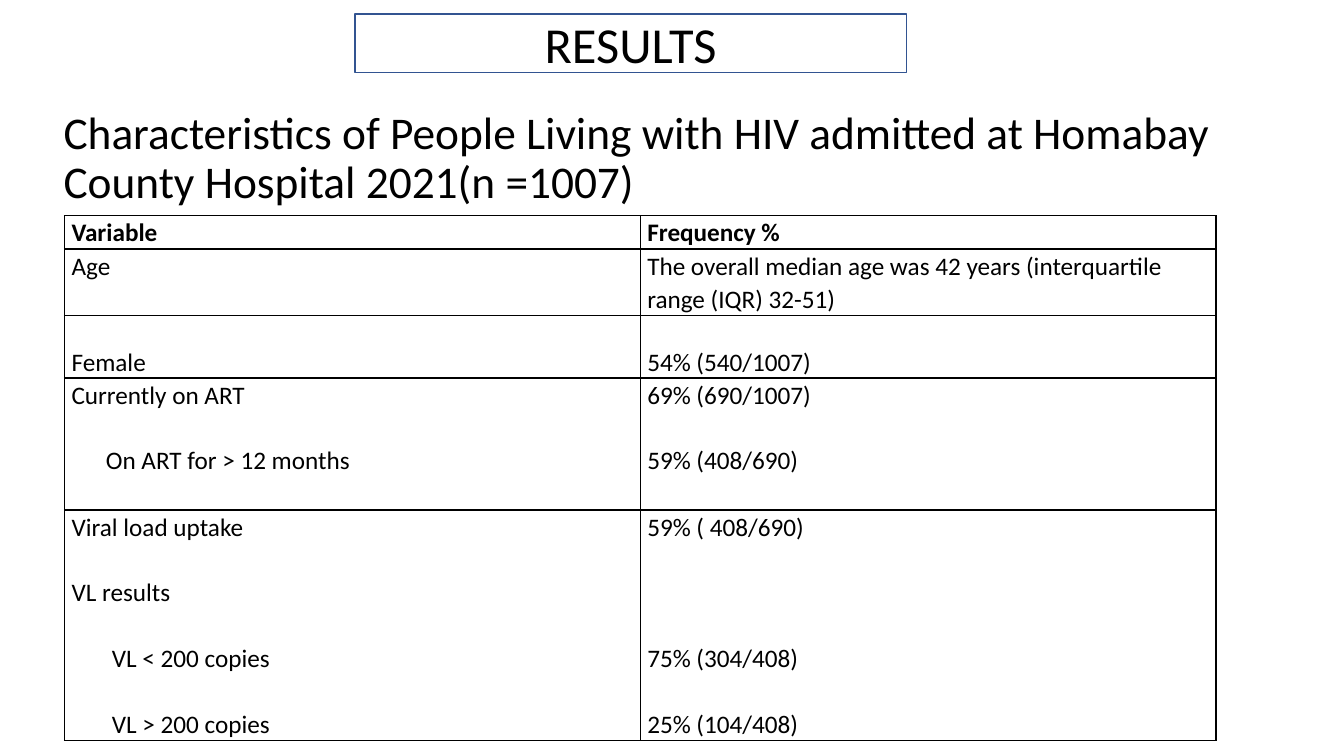
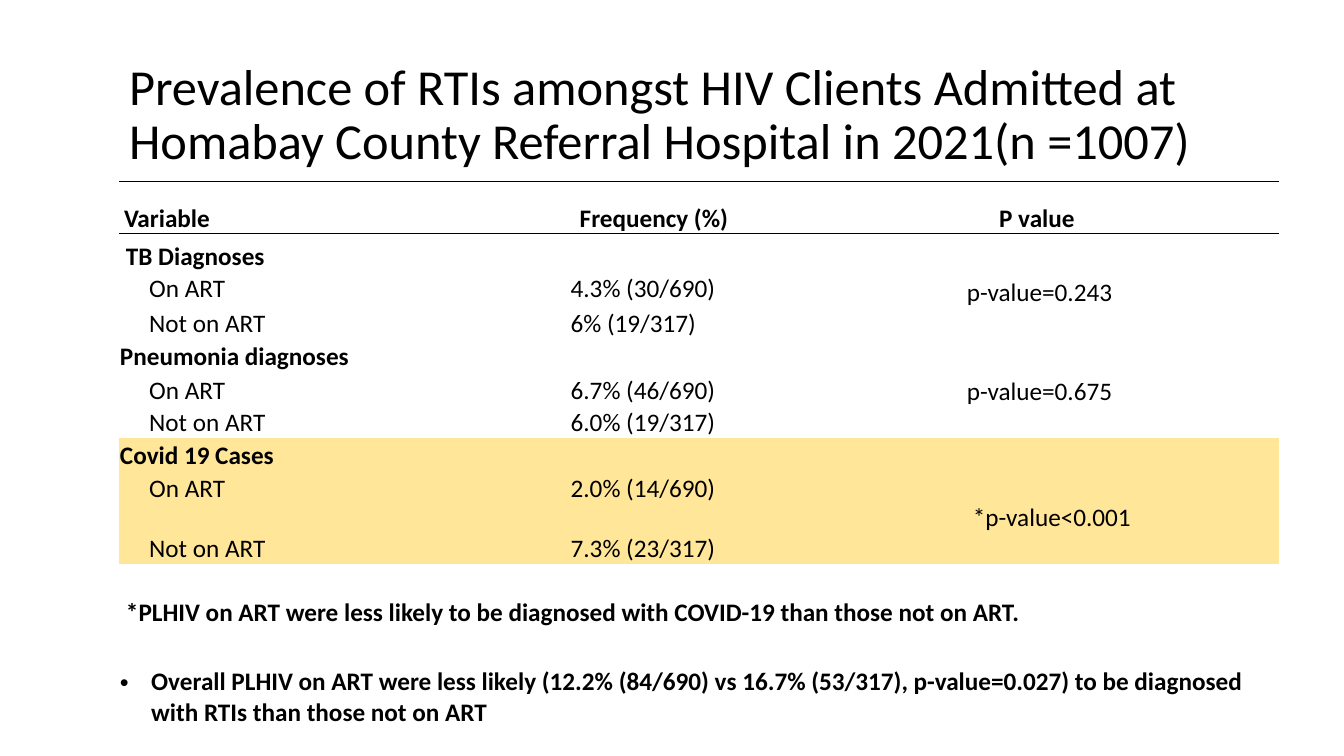
from dataclasses import dataclass
from lxml.etree import SubElement
from pptx import Presentation
from pptx.dml.color import RGBColor
from pptx.enum.shapes import MSO_SHAPE
from pptx.enum.text import MSO_ANCHOR, MSO_AUTO_SIZE, PP_ALIGN
from pptx.oxml.ns import qn
from pptx.util import Inches, Pt

BLACK = RGBColor(0x00, 0x00, 0x00)
BLUE = RGBColor(0x32, 0x54, 0x91)
YELLOW = RGBColor(0xFF, 0xE6, 0x99)
FONT = "Calibri"
TITLE_ONLY = 5
BLANK_LINE = 23.5
ALL_SIDES = ("L", "R", "T", "B")


@dataclass
class Line:
    text: str
    indent: float = 0
    blank_lines_before: int = 0
    bold: bool = False
    bullet: bool = False


@dataclass
class CellStyle:
    margins: dict
    anchor: MSO_ANCHOR
    spacing: float = 1.0
    borders: tuple = ()
    fill: RGBColor = None


def apply_format(target, values):
    for name, value in values.items():
        setattr(target, name, value)


def margins(side, top=0, bottom=0):
    return {
        "margin_left": Inches(side),
        "margin_right": Inches(side),
        "margin_top": Inches(top),
        "margin_bottom": Inches(bottom),
    }


def add_span(para, text, size, bold=False):
    span = para.add_run()
    span.text = text
    apply_format(span.font, {"name": FONT, "size": Pt(size), "bold": bold})
    span.font.color.rgb = BLACK


def place_title(page, box, text, size):
    title = page.shapes.title
    apply_format(title, dict(zip(("left", "top", "width", "height"), map(Inches, box))))
    frame = title.text_frame
    apply_format(frame, {
        **margins(0.1),
        "word_wrap": True,
        "auto_size": MSO_AUTO_SIZE.NONE,
        "vertical_anchor": MSO_ANCHOR.MIDDLE,
    })
    para = frame.paragraphs[0]
    apply_format(para, {"alignment": PP_ALIGN.LEFT, "line_spacing": 0.9})
    add_span(para, text, size)


def place_heading(page, box, text):
    heading = page.shapes.add_shape(MSO_SHAPE.RECTANGLE, *map(Inches, box))
    heading.shadow.inherit = False
    heading.fill.background()
    heading.line.color.rgb = BLUE
    heading.line.width = Pt(1)
    frame = heading.text_frame
    apply_format(frame, {"vertical_anchor": MSO_ANCHOR.MIDDLE, "word_wrap": True})
    para = frame.paragraphs[0]
    para.alignment = PP_ALIGN.CENTER
    add_span(para, text, 36)


def place_table(page, left, top, widths, heights):
    frame = page.shapes.add_table(
        len(heights), len(widths), Inches(left), Inches(top),
        Inches(sum(widths)), Inches(sum(heights)))
    table = frame.table
    apply_format(table, {"first_row": False, "horz_banding": False})
    for column, width in zip(table.columns, widths):
        column.width = Inches(width)
    for row, height in zip(table.rows, heights):
        row.height = Inches(height)
    return table


def style_cell(cell, style):
    apply_format(cell, {**style.margins, "vertical_anchor": style.anchor})
    properties = cell._tc.get_or_add_tcPr()
    for side in ALL_SIDES:
        border = SubElement(properties, qn(f"a:ln{side}"), w=str(Pt(1)))
        if side in style.borders:
            solid = SubElement(border, qn("a:solidFill"))
            SubElement(solid, qn("a:srgbClr"), val=str(BLACK))
        else:
            SubElement(border, qn("a:noFill"))
    if style.fill is None:
        cell.fill.background()
    else:
        cell.fill.solid()
        cell.fill.fore_color.rgb = style.fill


def write_cell(cell, lines, spacing):
    frame = cell.text_frame
    for index, line in enumerate(lines):
        para = frame.add_paragraph() if index else frame.paragraphs[0]
        apply_format(para, {
            "line_spacing": spacing,
            "space_before": Pt(BLANK_LINE * line.blank_lines_before),
        })
        properties = para._p.get_or_add_pPr()
        properties.set("marL", str(Inches(line.indent)))
        if line.bullet:
            properties.set("indent", str(-Inches(line.indent)))
            SubElement(properties, qn("a:buFont"), typeface="Arial")
            SubElement(properties, qn("a:buChar"), char="•")
        add_span(para, line.text, 18, line.bold)


def fill_table(table, rows, style_for):
    for row_index, row in enumerate(rows):
        for column_index, lines in enumerate(row):
            cell = table.cell(row_index, column_index)
            style = style_for(row_index, column_index)
            style_cell(cell, style)
            write_cell(cell, lines, style.spacing)


def characteristics_table(page, left, top):
    rows = [
        ([Line("Variable", bold=True)], [Line("Frequency %", bold=True)]),
        ([Line("Age")],
         [Line("The overall median age was 42 years (interquartile range (IQR) 32-51)")]),
        ([Line("Female")], [Line("54% (540/1007)")]),
        ([Line("Currently on ART"), Line("On ART for > 12 months", 0.34, 1)],
         [Line("69% (690/1007)"), Line("59% (408/690)", 0, 1)]),
        ([Line("Viral load uptake"), Line("VL results", 0, 1),
          Line("VL < 200 copies", 0.4, 1), Line("VL > 200 copies", 0.4, 1)],
         [Line("59% ( 408/690)"), Line("75% (304/408)", 0, 3),
          Line("25% (104/408)", 0, 1)]),
    ]
    female_row = 2

    def style_for(row, column):
        anchor = MSO_ANCHOR.BOTTOM if row == female_row else MSO_ANCHOR.TOP
        return CellStyle(margins(0.07), anchor, 1.07, ALL_SIDES)

    table = place_table(page, left, top, [5.71, 5.71], [0.33, 0.66, 0.62, 1.31, 2.28])
    fill_table(table, rows, style_for)


def diagnosis_rows(name, name_indent, on_art, not_on_art, p_value, p_indent=0):
    return [
        ([Line(name, name_indent, bold=True)], [], []),
        ([Line("On ART", 0.29)], [Line(on_art)], [Line(p_value, p_indent)]),
        ([Line("Not on ART", 0.29)], [Line(not_on_art)], []),
    ]


def prevalence_table(page, left, top):
    rows = [
        ([Line("Variable", bold=True)], [Line("Frequency (%)", 0.05, bold=True)],
         [Line("P value", 0.28, bold=True)]),
        *diagnosis_rows("TB Diagnoses", 0.06, "4.3% (30/690)", "6% (19/317)",
                        "p-value=0.243"),
        *diagnosis_rows("Pneumonia diagnoses", 0, "6.7% (46/690)", "6.0% (19/317)",
                        "p-value=0.675"),
        *diagnosis_rows("Covid 19 Cases", 0, "2.0% (14/690)", "7.3% (23/317)",
                        "*p-value<0.001", 0.06),
        ([], [], []),
        ([Line("*PLHIV on ART were less likely to be diagnosed with COVID-19 than "
               "those not on ART.", 0.06, bold=True)], [], []),
        ([Line("Overall PLHIV on ART were less likely (12.2% (84/690) vs 16.7% (53/317), "
               "p-value=0.027) to be diagnosed with RTIs than those not on ART",
               0.31, bold=True, bullet=True)], [], []),
    ]
    p_value_rows = (2, 5, 8)
    covid_rows = (7, 8, 9)
    note_rows = (10, 11, 12)
    covid_note_row = 11

    def style_for(row, column):
        if row == 0:
            return CellStyle(margins(0.05), MSO_ANCHOR.BOTTOM, 1.07, ("T", "B"))
        is_p_value = column == 2 and row in p_value_rows
        return CellStyle(
            margins(0.01, 0.01, 0.31 if is_p_value else 0),
            MSO_ANCHOR.TOP if row == covid_note_row else MSO_ANCHOR.BOTTOM,
            borders=("T",) if row == 1 else (),
            fill=YELLOW if row in covid_rows else None)

    heights = [0.52, 0.38, 0.32, 0.35, 0.32, 0.34, 0.32, 0.33, 0.32, 0.6, 0.32, 0.59, 0.72]
    table = place_table(page, left, top, [4.47, 3.93, 3.11], heights)
    for row in p_value_rows:
        table.cell(row, 2).merge(table.cell(row + 1, 2))
    for row in note_rows:
        table.cell(row, 0).merge(table.cell(row, 2))
    fill_table(table, rows, style_for)


def characteristics_page(deck):
    page = deck.slides.add_slide(deck.slide_layouts[TITLE_ONLY])
    place_title(
        page, (0.53, 1.08, 11.88, 1),
        "Characteristics of People Living with HIV admitted at Homabay County "
        "Hospital 2021(n =1007)", 32.4)
    characteristics_table(page, 0.64, 2.14)
    place_heading(page, (3.52, 0.14, 5.47, 0.58), "RESULTS")


def prevalence_page(deck):
    page = deck.slides.add_slide(deck.slide_layouts[TITLE_ONLY])
    place_title(
        page, (1.18, 0.6, 11.5, 1.1),
        "Prevalence of RTIs amongst HIV Clients Admitted at Homabay County "
        "Referral Hospital in 2021(n =1007)", 36)
    prevalence_table(page, 1.18, 1.8)


def main():
    deck = Presentation()
    apply_format(deck, {"slide_width": Inches(13.33), "slide_height": Inches(7.5)})
    characteristics_page(deck)
    prevalence_page(deck)
    deck.save("out.pptx")


if __name__ == "__main__":
    main()
